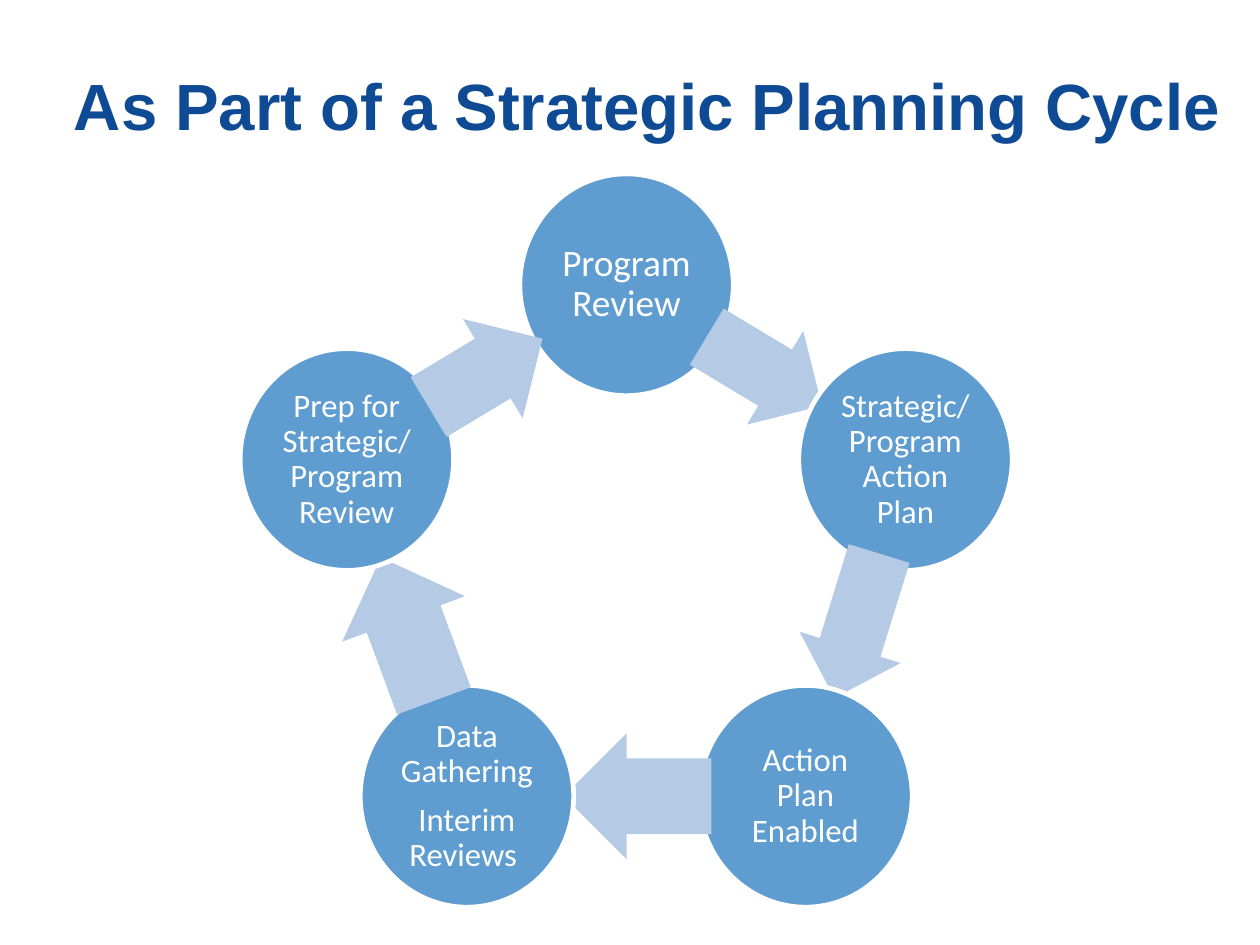
from pptx import Presentation
from pptx.dml.color import RGBColor
from pptx.enum.shapes import MSO_SHAPE
from pptx.enum.text import MSO_ANCHOR, MSO_AUTO_SIZE, PP_ALIGN
from pptx.util import Inches, Pt

CIRCLE, ARROW = MSO_SHAPE.OVAL, MSO_SHAPE.RIGHT_ARROW
MIDDLE, CENTER = MSO_ANCHOR.MIDDLE, PP_ALIGN.CENTER
NO_FIT = MSO_AUTO_SIZE.NONE

COLORS = {"title": "0F4A94", "stage": "5F9DD1", "arrow": "B5CBE5", "white": "FFFFFF"}

# A 4:3 slide on a square grid, 75 columns wide
WIDTH = Inches(7.5)
HEIGHT = WIDTH * 3 // 4
COL = ROW = WIDTH / 75
STAGE = (12.7, 13.2)

# Stage: center, text size, paragraphs; then its arrow: center, size, turn
CYCLE = [
    ((37.3, 16.95), 16, ["Program Review"],
     (45.5, 22.1), (8, 6.5), 31),
    ((53.9, 27.35), 14, ["Strategic/ Program Action Plan"],
     (51, 37.25), (9, 6.3), 107.2),
    ((47.95, 47.4), 14, ["Action Plan Enabled"],
     (37.95, 47.4), (8.8, 7.5), 180),
    ((27.8, 47.4), 14, ["Data Gathering", "Interim Reviews "],
     (24.25, 37.45), (9.1, 7.8), 249.7),
    ((20.65, 27.35), 14, ["Prep for Strategic/ Program Review"],
     (28.9, 22.2), (7.9, 6.9), 329),
]


def color(name):
    return RGBColor.from_string(COLORS[name])


def box(center, size):
    (x, y), (w, h) = center, size
    return (round((x - w / 2) * COL), round((y - h / 2) * ROW),
            round(w * COL), round(h * ROW))


def write(shape, lines, face, size, hue, bold=False):
    frame = shape.text_frame
    frame.text = "\n".join(lines)
    frame.word_wrap, frame.auto_size = True, NO_FIT
    frame.vertical_anchor = MIDDLE
    frame.margin_left = frame.margin_right = Inches(0.02)
    frame.margin_top = frame.margin_bottom = Inches(0.02)
    for para in frame.paragraphs:
        para.alignment = CENTER
        for run in para.runs:
            font = run.font
            font.name, font.size, font.bold = face, Pt(size), bold
            font.color.rgb = color(hue)


def add_shape(slide, kind, center, size, hue):
    shape = slide.shapes.add_shape(kind, *box(center, size))
    shape.shadow.inherit = False
    shape.fill.solid()
    shape.fill.fore_color.rgb = color(hue)
    return shape


def add_stage(slide, center, size, lines):
    stage = add_shape(slide, CIRCLE, center, STAGE, "stage")
    stage.line.color.rgb = color("white")
    stage.line.width = Pt(2)
    write(stage, lines, "Calibri", size, "white")
    for i, para in enumerate(stage.text_frame.paragraphs):
        para.line_spacing = 0.9
        if i:
            para.space_before = Pt(5.6)


def add_arrow(slide, center, size, turn):
    arrow = add_shape(slide, ARROW, center, size, "arrow")
    arrow.line.fill.background()
    arrow.adjustments[0], arrow.adjustments[1] = 0.6, 0.5
    arrow.rotation = turn


def add_title(slide, text):
    title = slide.shapes.title
    title.left, title.top, title.width, title.height = box((38.5, 6.2), (70.8, 5.9))
    write(title, [text], "Arial", 28, "title", bold=True)


def main():
    deck = Presentation()
    deck.slide_width, deck.slide_height = WIDTH, HEIGHT
    slide = deck.slides.add_slide(deck.slide_layouts[5])
    add_title(slide, "As Part of a Strategic Planning Cycle")

    # Each arrow lies over its own stage and under the next one
    for center, size, lines, spot, extent, turn in CYCLE:
        add_stage(slide, center, size, lines)
        add_arrow(slide, spot, extent, turn)

    deck.save("out.pptx")


if __name__ == "__main__":
    main()
